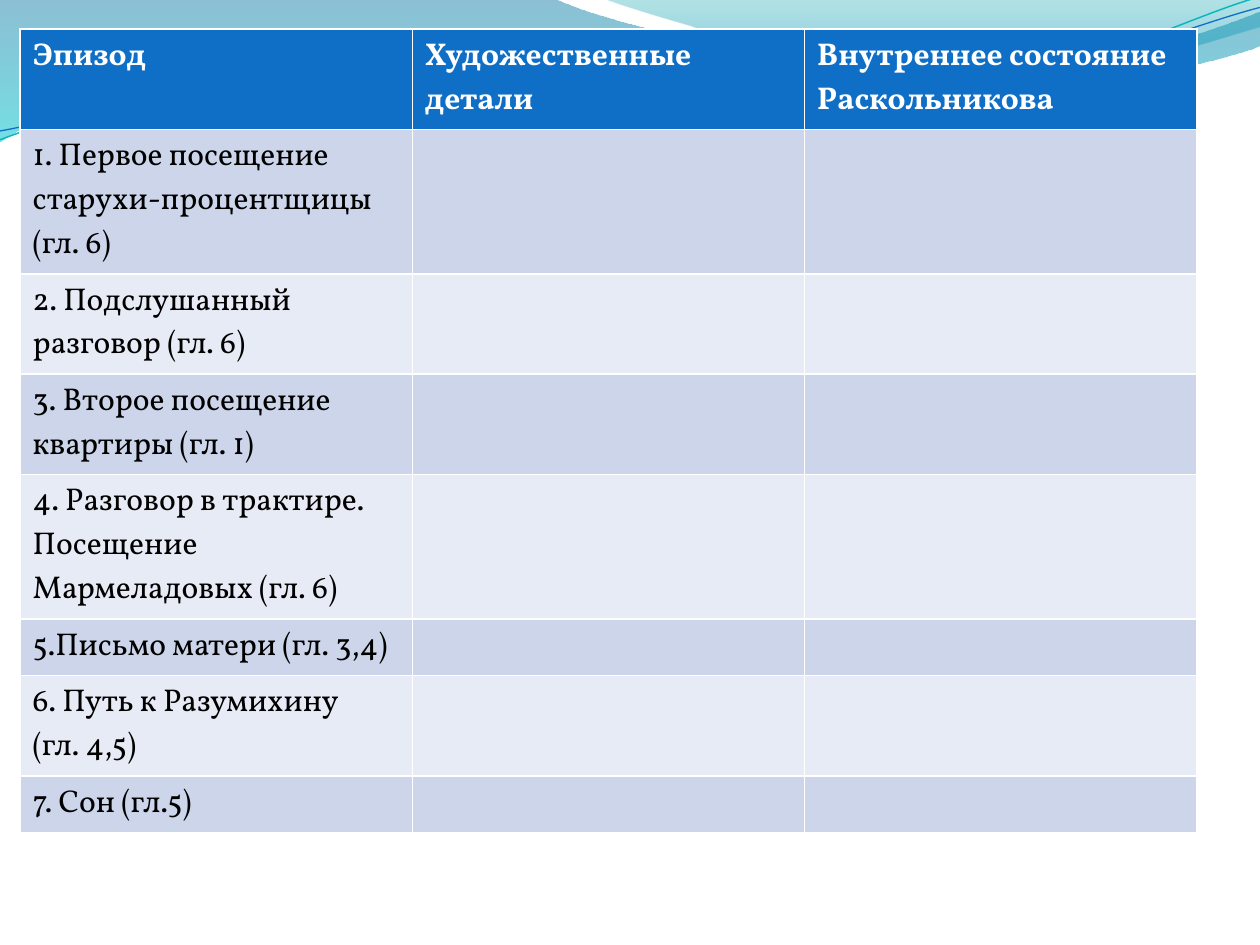
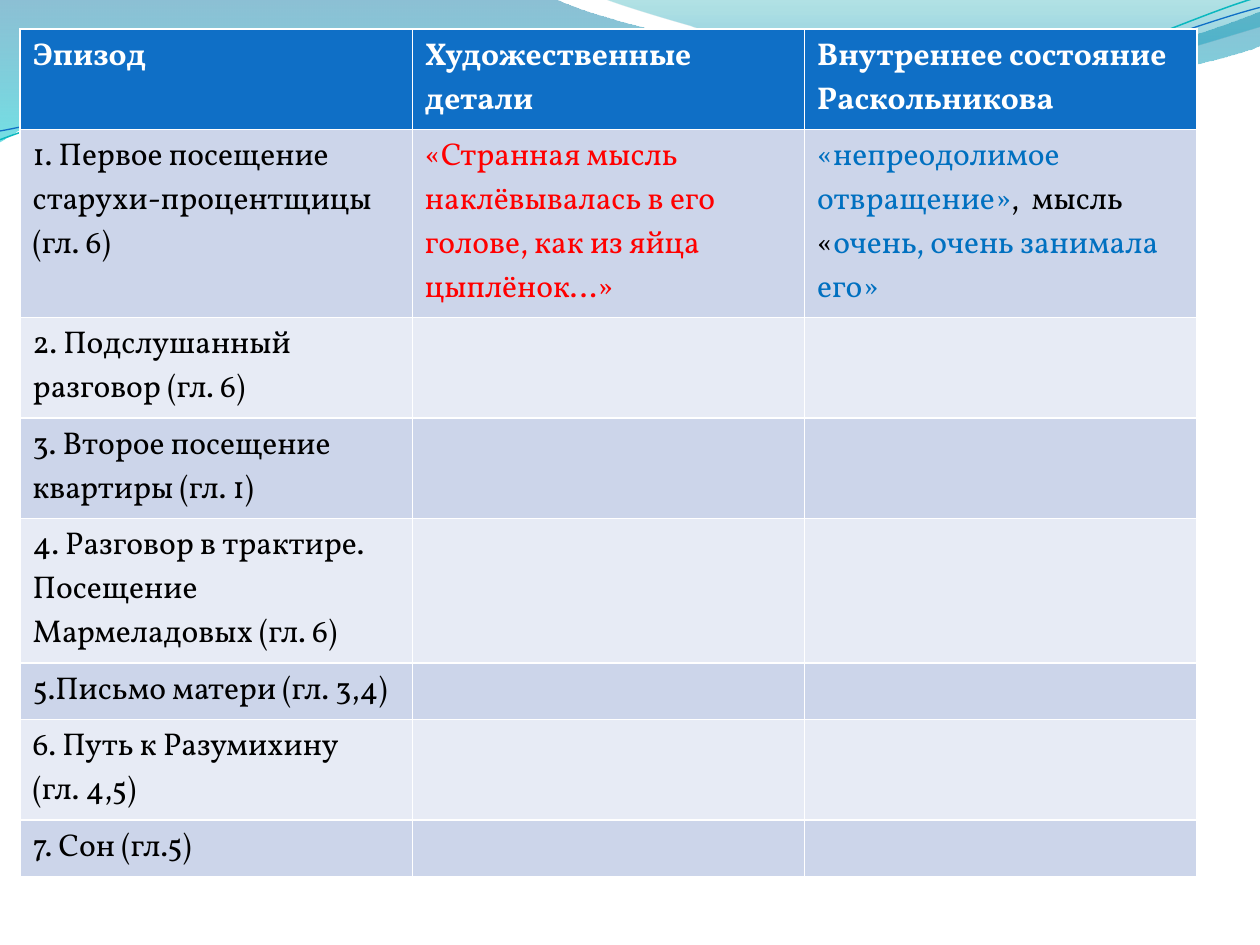
from dataclasses import dataclass
from math import cos, radians, sin

from pptx import Presentation
from pptx.dml.color import RGBColor as Rgb
from pptx.oxml import parse_xml
from pptx.oxml.ns import nsdecls
from pptx.util import Inches, Pt


@dataclass(frozen=True)
class Theme:
    """Colours and type shared by the slides."""
    font: str = "Vollkorn"
    size: int = 18
    header: str = "0F6FC6"
    bands: tuple = ("CCD5EA", "E7EBF5")
    white: str = "FFFFFF"
    ink: str = "000000"
    quote: str = "FF0000"
    feeling: str = "0070C0"
    teal: str = "0AB8BF"


THEME = Theme()
WIDTH, HEIGHT = 10, 7.5
TABLE_LEFT, TABLE_TOP, TABLE_WIDTH = 0.16, 0.23, 9.34
ROW_HEIGHTS = (0.72, 1.03, 0.72, 0.72, 1.03, 0.42, 0.42, 0.42)
CURVE_TILT = 2.7

HEADINGS = ("Эпизод", "Художественные детали", "Внутреннее состояние Раскольникова")
EPISODES = (
    "1. Первое посещение старухи-процентщицы (гл. 6)",
    "2. Подслушанный разговор (гл. 6)",
    "3. Второе посещение квартиры (гл. 1)",
    "4. Разговор в трактире.  Посещение Мармеладовых (гл. 6)",
    "5.Письмо матери (гл. 3,4)",
    "6. Путь к Разумихину\n(гл. 4,5)",
    "7. Сон (гл.5)",
)
FIRST_VISIT = {
    (1, 1): [("«Странная мысль наклёвывалась в его голове, как из яйца цыплёнок…»",
              THEME.quote)],
    (1, 2): [("«непреодолимое отвращение»", THEME.feeling),
             (",  мысль  «", THEME.ink),
             ("очень, очень занимала его»", THEME.feeling)],
}

LEFT_WAVE = [(0, 0), (4.4, -0.01), (4.76, 0.17, 6.64, 0.63, 7.58, 0.63),
             (8.53, 0.63, 9.58, 0.26, 10, 0.09), (10.01, 0.36),
             (9.83, 0.44, 8.7, 0.76, 7.46, 0.75),
             (6.22, 0.75, 3.82, 0.28, 2.57, 0.34),
             (1.29, 0.36, 0.46, 0.83, -0.01, 1.13), (0, 0)]
RIGHT_WAVE = [(4.79, -0.01), (5.09, 0.11, 6.82, 0.62, 7.69, 0.65),
              (8.56, 0.69, 9.61, 0.32, 10, 0.21), (10, 0), (4.79, -0.01)]
TEAL_CURVE = [(0, 1.11), (0.48, 0.93, 1.58, 0.57, 2.77, 0.52),
              (3.95, 0.47, 5.93, 0.89, 7.13, 0.8),
              (8.33, 0.71, 9.38, 0.15, 9.98, -0.02)]
BLUE_CURVE = [(0, 1.04), (0.47, 0.96, 1.64, 0.61, 2.83, 0.56),
              (4.03, 0.51, 5.97, 0.84, 7.17, 0.75),
              (8.36, 0.67, 9.41, 0.21, 10, 0.06)]


def add_outline(page, outline, close):
    """Draw an outline of lines and cubic curves without fill, line or shadow."""
    points = [(Inches(x), Inches(y)) for part in outline
              for x, y in zip(part[::2], part[1::2])]
    builder = page.shapes.build_freeform(*points[0])
    builder.add_line_segments(points[1:], close=close)
    shape = builder.convert_to_shape()
    segments = iter(shape.element.findall(".//{*}lnTo"))
    for part in outline[1:]:
        first = next(segments)
        if len(part) == 6:
            bend = parse_xml(f'<a:cubicBezTo {nsdecls("a")}/>')
            first.addprevious(bend)
            for segment in (first, next(segments), next(segments)):
                bend.append(segment[0])
                segment.getparent().remove(segment)
    shape.shadow.inherit = False
    shape.fill.background()
    shape.line.fill.background()
    return shape


def add_wave(page, outline, stops):
    """Draw a wave with a translucent vertical gradient."""
    shape = add_outline(page, outline, close=True)
    marks = "".join(
        f'<a:gs pos="{place * 1000}"><a:srgbClr val="{color}">'
        f'<a:alpha val="{opacity * 1000}"/></a:srgbClr></a:gs>'
        for place, color, opacity in stops)
    gradient = parse_xml(f'<a:gradFill {nsdecls("a")} rotWithShape="1"><a:gsLst>{marks}'
                         '</a:gsLst><a:lin ang="5400000" scaled="0"/></a:gradFill>')
    properties = shape.element.spPr
    properties.replace(properties.find("{*}noFill"), gradient)
    return shape


def turn(outline, degrees):
    """Turn an outline clockwise about the middle of its ends."""
    xs = (outline[0][0], outline[-1][-2])
    ys = (outline[0][1], outline[-1][-1])
    middle_x, middle_y = sum(xs) / 2, sum(ys) / 2
    c, s = cos(radians(degrees)), sin(radians(degrees))
    turned = []
    for part in outline:
        offsets = [(x - middle_x, y - middle_y) for x, y in zip(part[::2], part[1::2])]
        turned.append(tuple(value for x, y in offsets for value in
                            (middle_x + x * c - y * s, middle_y + x * s + y * c)))
    return turned


def add_curve(page, outline, color, width):
    """Draw a thin open curve in a tilted frame."""
    shape = add_outline(page, turn(outline, CURVE_TILT), close=False)
    shape.rotation = 360 - CURVE_TILT
    shape.line.color.rgb = Rgb.from_string(color)
    shape.line.width = Pt(width)
    return shape


def decorate(layout, page):
    """Place the waves and curves on the layout that the slides share."""
    for placeholder in list(layout.placeholders):
        layout.shapes.element.remove(placeholder.element)
    shapes = [
        add_wave(page, LEFT_WAVE, [(0, "0074A1", 45), (100, "00C6CF", 55)]),
        add_wave(page, RIGHT_WAVE, [(0, "00A1A9", 30), (80, "008BBF", 45)]),
        add_curve(page, TEAL_CURVE, THEME.teal, 0.85),
        add_curve(page, BLUE_CURVE, THEME.header, 0.75),
    ]
    for shape in shapes:
        layout.shapes.element.append(shape.element)


def add_span(para, text, color=THEME.ink, bold=False):
    """Add a formatted run to a paragraph."""
    span = para.add_run()
    span.text = text
    span.font.name = THEME.font
    span.font.size = Pt(THEME.size)
    span.font.bold = bold
    span.font.color.rgb = Rgb.from_string(color)


def write(cell, text, **style):
    """Write one paragraph per line of text into a cell."""
    frame = cell.text_frame
    for index, line in enumerate(text.split("\n")):
        para = frame.add_paragraph() if index else frame.paragraphs[0]
        add_span(para, line, **style)


def paint(cell, row):
    """Fill a cell with the colour of its row."""
    color = THEME.bands[(row - 1) % 2] if row else THEME.header
    cell.fill.solid()
    cell.fill.fore_color.rgb = Rgb.from_string(color)


def add_episode_table(page, height, answers):
    """Add the table of episodes with the answers known so far."""
    rows, columns = len(ROW_HEIGHTS), len(HEADINGS)
    frame = page.shapes.add_table(
        rows, columns, Inches(TABLE_LEFT), Inches(TABLE_TOP),
        Inches(TABLE_WIDTH), Inches(height))
    table = frame.table
    for row, row_height in zip(table.rows, ROW_HEIGHTS):
        row.height = Inches(row_height)
    frame.height = Inches(height)
    for row in range(rows):
        for column in range(columns):
            paint(table.cell(row, column), row)
    for column, heading in enumerate(HEADINGS):
        write(table.cell(0, column), heading, color=THEME.white, bold=True)
    for row, episode in enumerate(EPISODES, start=1):
        write(table.cell(row, 0), episode)
    for place, spans in answers.items():
        para = table.cell(*place).text_frame.paragraphs[0]
        for text, color in spans:
            add_span(para, text, color=color)


def main():
    """Build the blank table slide and the one with the first answers."""
    deck = Presentation()
    deck.slide_width, deck.slide_height = Inches(WIDTH), Inches(HEIGHT)
    layout = deck.slide_layouts.get_by_name("Blank")
    blank, answered = [deck.slides.add_slide(layout) for _ in range(2)]
    decorate(layout, blank)
    add_episode_table(blank, 5.76, {})
    add_episode_table(answered, 6.03, FIRST_VISIT)
    deck.save("out.pptx")


if __name__ == "__main__":
    main()
